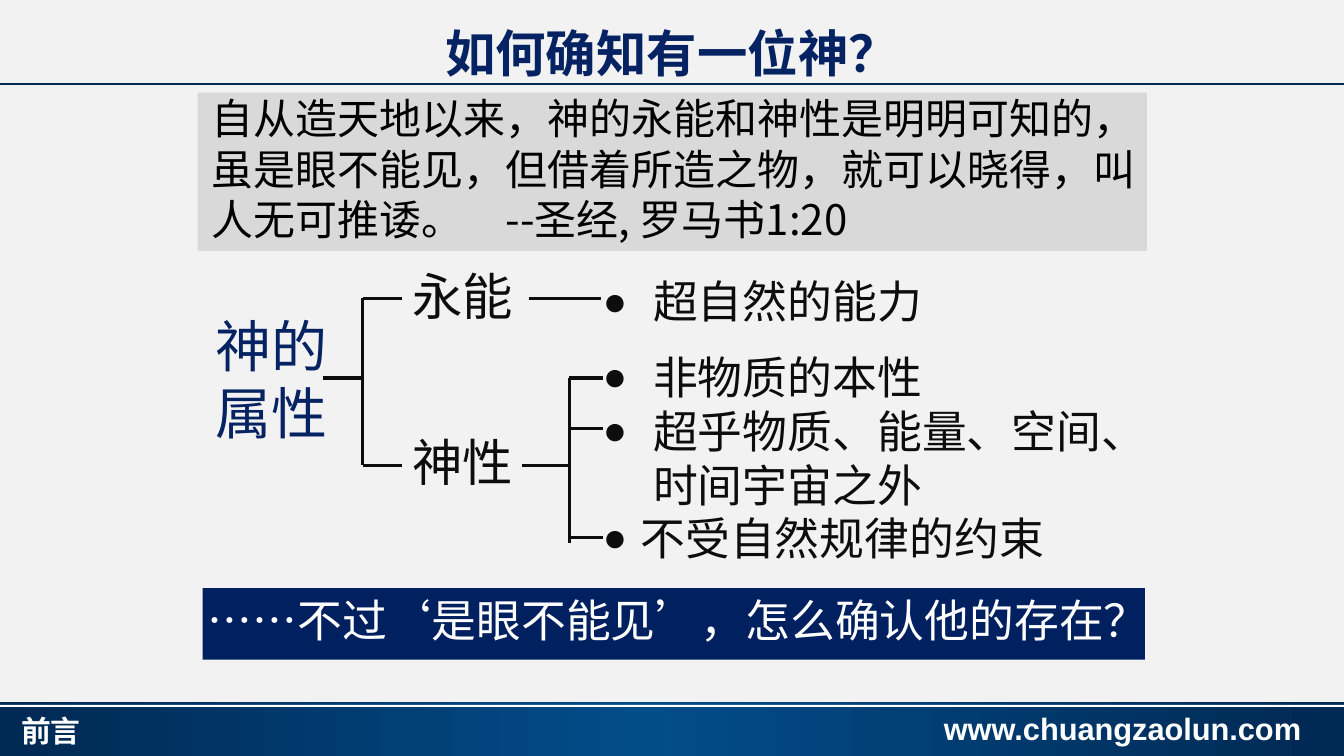
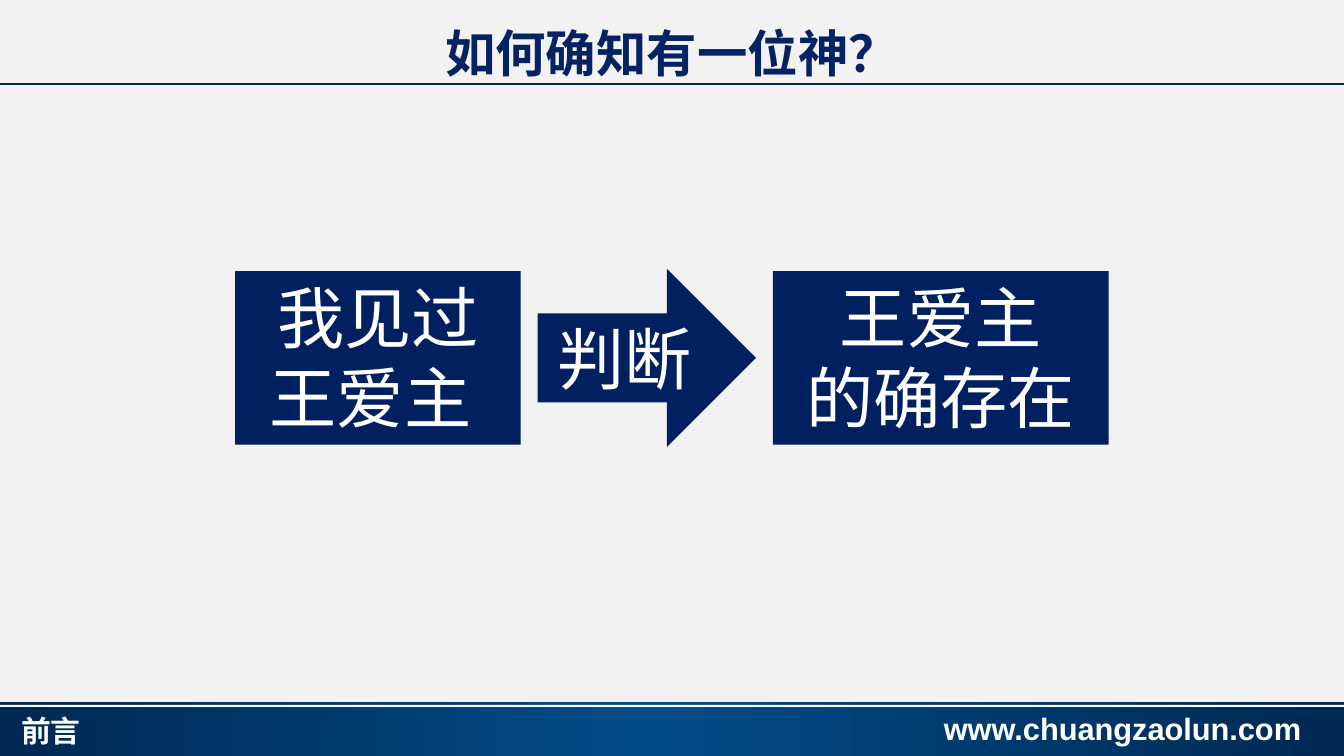
import pptx
import pptx.util
import pptx.dml.color
import pptx.enum.shapes
import pptx.enum.text
import pptx.oxml.ns
from lxml import etree

COLUMNS, ROWS = 80, 45
NAVY, TITLE_BLUE, RULE_BLUE, GLOW_BLUE = "002060", "052262", "002953", "024C89"
INK, BLACK, WHITE, GREY, PAPER = "0D0D0D", "000000", "FFFFFF", "D9D9D9", "F2F2F2"
CHINESE, LATIN = "Noto Sans CJK SC", "Arial"
SHAPE = pptx.enum.shapes.MSO_SHAPE
ALIGN = pptx.enum.text.PP_ALIGN
ANCHOR = pptx.enum.text.MSO_ANCHOR
TWO_LISTS, TITLE_ONLY = 3, 5


def color(value):
    return pptx.dml.color.RGBColor.from_string(value)


def child(parent, tag, **attributes):
    return etree.SubElement(parent, pptx.oxml.ns.qn(tag), attributes)


def write(shape, text, size=32, ink=INK, font=CHINESE, bold=False, align=ALIGN.LEFT,
          anchor=ANCHOR.TOP, insets=(0.1, 0.05, 0.1, 0.05), wrap=True, spacing=1.0, hangs=()):
    frame = shape.text_frame
    frame.auto_size = pptx.enum.text.MSO_AUTO_SIZE.NONE
    frame.word_wrap = wrap
    frame.vertical_anchor = anchor
    (frame.margin_left, frame.margin_top,
     frame.margin_right, frame.margin_bottom) = map(pptx.util.Inches, insets)
    for index, line in enumerate(text.split("\n")):
        para = frame.add_paragraph() if index else frame.paragraphs[0]
        if hangs:
            hang = Deck.width * hangs[index] // COLUMNS
            layout = para._p.get_or_add_pPr()
            layout.set("marL", str(int(hang)))
            layout.set("indent", str(-int(hang)))
            child(layout, "a:buSzPct", val="90000")
            child(layout, "a:buChar", char="●")
        para.alignment = align
        para.line_spacing = spacing
        para.space_before = pptx.util.Pt(0)
        span = para.add_run()
        span.text = line
        span.font.size = pptx.util.Pt(size)
        span.font.bold = bold
        span.font.name = font
        span.font.color.rgb = color(ink)
        child(span._r.get_or_add_rPr(), "a:ea", typeface=CHINESE)


class Deck:
    width, height = pptx.util.Inches(13.333), pptx.util.Inches(7.5)

    def __init__(self):
        self.deck = pptx.Presentation()
        self.deck.slide_width, self.deck.slide_height = self.width, self.height
        self.master = self.deck.slide_master
        self.master.background.fill.solid()
        self.master.background.fill.fore_color.rgb = color(PAPER)
        self.page = None

    def place(self, column, row, columns=0, rows=0):
        return [int(self.width * column / COLUMNS), int(self.height * row / ROWS),
                int(self.width * columns / COLUMNS), int(self.height * rows / ROWS)]

    def fit(self, shape, area):
        shape.left, shape.top, shape.width, shape.height = self.place(*area)

    def new_page(self, layout, title):
        self.page = self.deck.slides.add_slide(self.deck.slide_layouts[layout])
        self.fit(self.page.shapes.title, (0, 1.2, 80, 4.26))
        write(self.page.shapes.title, title, size=36, ink=TITLE_BLUE, font=LATIN, bold=True,
              align=ALIGN.CENTER, anchor=ANCHOR.MIDDLE, spacing=0.9)

    def bullets(self, number, area, text, hangs):
        body = self.page.placeholders[number]
        self.fit(body, area)
        write(body, text, hangs=hangs)

    def text(self, area, text, **style):
        box = self.page.shapes.add_textbox(*self.place(*area))
        write(box, text, **style)
        return box

    def block(self, area, fill, text="", kind=SHAPE.RECTANGLE, **style):
        shape = self.page.shapes.add_shape(kind, *self.place(*area))
        shape.shadow.inherit = False
        shape.fill.solid()
        shape.fill.fore_color.rgb = color(fill)
        shape.line.fill.background()
        if text:
            write(shape, text, **style)
        return shape

    def gradient(self, area, stops):
        shape = self.block(area, stops[0][1])
        shape.fill.gradient()
        shape.fill.gradient_angle = 0
        stop_list = shape.element.spPr.find(".//" + pptx.oxml.ns.qn("a:gsLst"))
        for stop in list(stop_list):
            stop_list.remove(stop)
        for share, value in stops:
            child(child(stop_list, "a:gs", pos=str(share * 1000)), "a:srgbClr", val=value)
        return shape

    def line(self, start, end, ink=INK, weight=2.25):
        line = self.page.shapes.add_connector(
            pptx.enum.shapes.MSO_CONNECTOR.STRAIGHT,
            *self.place(*start)[:2], *self.place(*end)[:2])
        line.line.color.rgb = color(ink)
        line.line.width = pptx.util.Pt(weight)
        child(line.element.spPr, "a:effectLst")
        return line

    def share_frame(self, section, address):
        label = dict(ink=WHITE, bold=True, insets=(0, 0, 0, 0), wrap=False)
        parts = [
            self.line((0, 5), (COLUMNS, 5), RULE_BLUE, 1.75),
            self.gradient((0, 41.8, COLUMNS, 3.2),
                          [(0, RULE_BLUE), (48, GLOW_BLUE), (100, RULE_BLUE)]),
            self.block((0, 41.95, COLUMNS, 0.12), WHITE),
            self.text((51.36, 42.48, 26.1, 2.5), address, size=22, font=LATIN,
                      align=ALIGN.RIGHT, spacing=0.9, **label),
            self.text((1.26, 42.42, 30.24, 2.5), section, size=21.3, **label),
        ]
        for part in parts:
            self.master.shapes.element.append(part.element)


def attributes_page(deck, title):
    deck.new_page(TWO_LISTS, title)
    deck.block((11.76, 5.52, 56.52, 9.42), GREY,
               "自从造天地以来，神的永能和神性是明明可知的，虽是眼不能见，但借着所造之物，"
               "就可以晓得，叫人无可推诿。　--圣经, 罗马书1:20",
               size=30, ink=BLACK, insets=(0.14, 0, 0, 0))
    deck.text((8.82, 18.24, 14.64, 8.7), "神的\n属性", size=40, ink=TITLE_BLUE,
              align=ALIGN.CENTER)
    for row, name in ((15.48, "永能"), (25.38, "神性")):
        deck.text((23.52, row, 8.04, 4.26), name, size=36, align=ALIGN.CENTER)
    deck.bullets(1, (35.28, 16.02, 30.24, 3.84), "超自然的能力", [3])
    deck.bullets(2, (35.28, 20.52, 31.44, 13.56),
                 "非物质的本性\n超乎物质、能量、空间、时间宇宙之外\n不受自然规律的约束",
                 [3, 3, 2.25])
    power, middle, nature = 17.76, 22.5, 27.7
    trunk, branch = 21.6, 33.9
    deck.line((19.2, middle), (trunk, middle))
    deck.line((trunk, power), (trunk, nature))
    for row in (power, nature):
        deck.line((trunk, row), (23.94, row))
    deck.line((31.5, power), (35.8, power))
    deck.line((31.1, nature), (34, nature))
    deck.line((branch, middle), (branch, 32.34))
    for row in (middle, 25.5, 32):
        deck.line((branch, row), (35.9, row))
    deck.block((12.06, 35, 56.1, 4.26), NAVY, "……不过‘是眼不能见’，怎么确认他的存在？",
               ink=WHITE, insets=(0.05, 0.05, 0, 0.05))


def judgement_page(deck, title):
    deck.new_page(TITLE_ONLY, title)
    style = dict(size=48, ink=WHITE, align=ALIGN.CENTER)
    deck.block((46, 16.14, 20, 10.32), NAVY, "王爱主\n的确存在", font=LATIN, **style)
    deck.block((14, 16.14, 17, 10.32), NAVY, "我见过\n王爱主 ", font=LATIN, **style)
    deck.block((32, 16, 13, 10.6), NAVY, "判断", kind=SHAPE.RIGHT_ARROW,
               anchor=ANCHOR.MIDDLE, **style)


def main():
    deck = Deck()
    title = "如何确知有一位神？"
    attributes_page(deck, title)
    deck.share_frame("前言", "www.chuangzaolun.com")
    judgement_page(deck, title)
    deck.deck.save("out.pptx")


if __name__ == "__main__":
    main()
